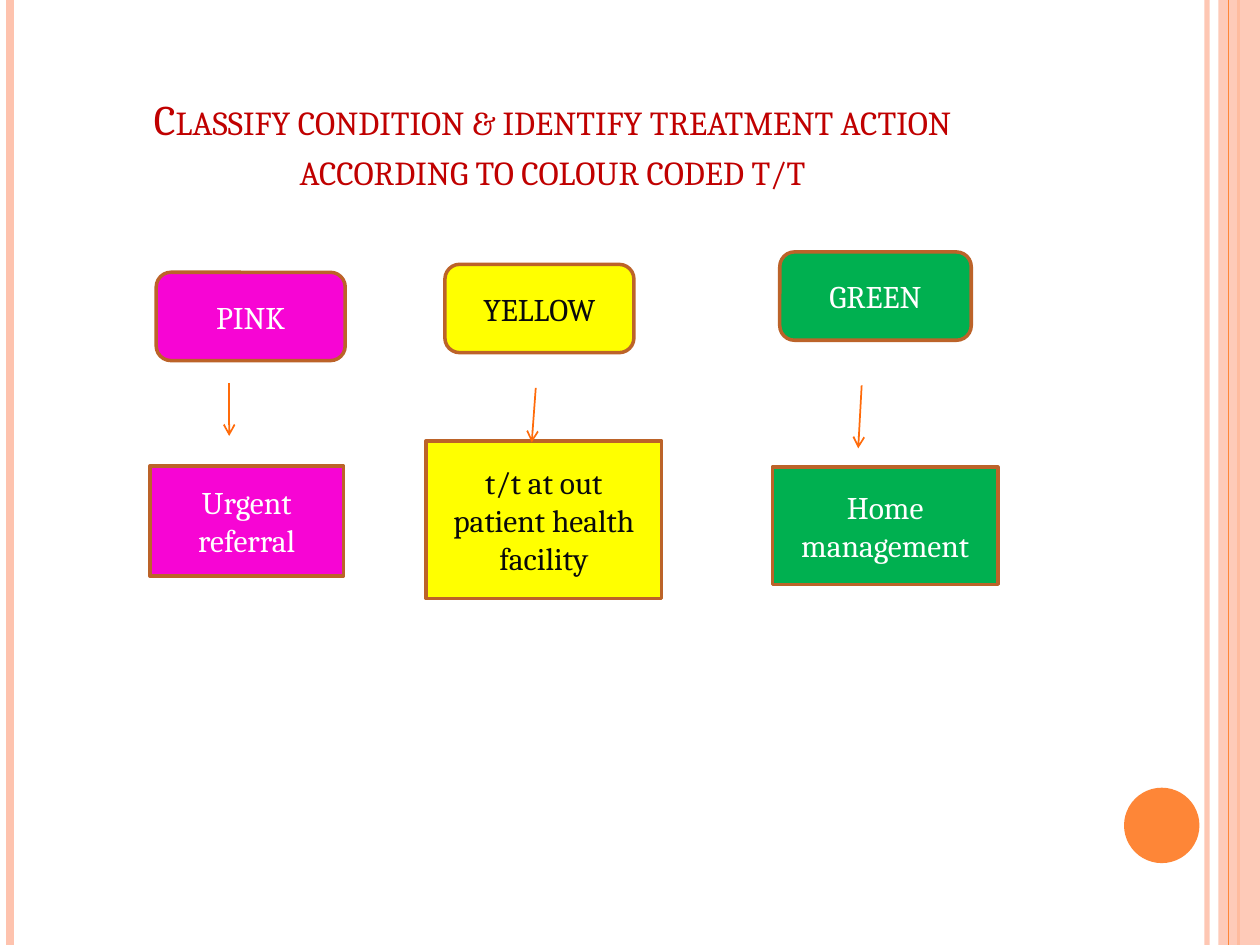
from lxml.etree import SubElement
from pptx import Presentation
from pptx.dml.color import RGBColor
from pptx.enum.shapes import MSO_CONNECTOR, MSO_SHAPE
from pptx.enum.text import MSO_ANCHOR, MSO_AUTO_SIZE, PP_ALIGN
from pptx.oxml.ns import qn
from pptx.util import Cm, Pt

COLOURS = {
    "peach": "FEC3AE", "orange": "FE8637", "arrow": "FF6B0A", "border": "BC6329",
    "title": "C00000", "pink": "F705D4", "yellow": "FFFF00", "green": "00B050",
    "white": "FFFFFF", "ink": "09090B",
}
WIDTH, HEIGHT = 25.4, 19.05
STRIPES = [
    (24.33, "peach", 3, 93), (0.2, "peach", 4.5, 100), (24.97, "orange", 1.5, 100),
]
COLUMNS = [
    {"box": (3.02, 5.49, 3.91, 6.12), "fill": "pink", "ink": "white",
     "code": "PINK", "action": "Urgent referral", "code_box": (0.13, 3.81),
     "arrow": (1.6, 2.23, 1.6, 3.3), "action_height": 2.21},
    {"box": (8.59, 5.33, 4.75, 6.74), "fill": "yellow", "ink": "ink",
     "code": "YELLOW", "action": "t/t at out patient health facility",
     "code_box": (0.38, 3.81), "arrow": (2.21, 2.49, 2.13, 3.59),
     "action_height": 3.18},
    {"box": (15.57, 5.08, 4.55, 6.7), "fill": "green", "ink": "white",
     "code": "GREEN", "action": "Home management", "code_box": (0.15, 3.86),
     "arrow": (1.8, 2.69, 1.73, 3.96), "action_height": 2.36},
]


def colour(name):
    """Return the named colour."""
    return RGBColor.from_string(COLOURS[name])


def set_opacity(element, percent):
    """Make the colour inside a fill or line partly see-through."""
    if percent < 100:
        value = next(element.iter(qn("a:srgbClr")))
        SubElement(value, qn("a:alpha"), val=str(percent * 1000))


def write_text(shape, text, size, ink, anchor):
    """Write one centred paragraph and return its run."""
    frame = shape.text_frame
    frame_format = {
        "word_wrap": True, "auto_size": MSO_AUTO_SIZE.NONE, "vertical_anchor": anchor,
    }
    for name, value in frame_format.items():
        setattr(frame, name, value)
    para = frame.paragraphs[0]
    para.alignment = PP_ALIGN.CENTER
    span = para.add_run()
    span.text = text
    for name, value in {"name": "Cambria", "size": Pt(size)}.items():
        setattr(span.font, name, value)
    span.font.color.rgb = colour(ink)
    return span


def add_line(page, ends, ink, width, opacity=100, arrow=False):
    """Draw a straight line, with an arrowhead at its end if asked."""
    line = page.shapes.add_connector(MSO_CONNECTOR.STRAIGHT, *map(Cm, ends))
    line.line.color.rgb = colour(ink)
    line.line.width = Pt(width)
    properties = line._element.spPr
    set_opacity(properties, opacity)
    if arrow:
        SubElement(properties.find(qn("a:ln")), qn("a:tailEnd"), type="arrow")
    SubElement(properties, qn("a:effectLst"))


def add_block(page, kind, box, fill, border=None, opacity=100):
    """Add a flat filled shape."""
    block = page.shapes.add_shape(kind, *map(Cm, box))
    block.shadow.inherit = False
    block.fill.solid()
    block.fill.fore_color.rgb = colour(fill)
    set_opacity(block._element.spPr, opacity)
    if border:
        block.line.color.rgb = colour(border)
        block.line.width = Pt(2)
    else:
        block.line.fill.background()
    return block


def add_decoration(page, box):
    """Place the edge stripes and the disc."""
    left, top, width, height = box
    for offset, ink, weight, opacity in STRIPES:
        x = left + offset
        add_line(page, (x, top, x, top + height), ink, weight, opacity)
    band = (left + width - 0.84, top, 0.84, height)
    add_block(page, MSO_SHAPE.RECTANGLE, band, "peach", opacity=87)
    x = left + 24.77
    add_line(page, (x, top, x, top + height), "orange", 0.75)
    add_block(page, MSO_SHAPE.OVAL, (left + 22.66, top + 15.88, 1.52, 1.52), "orange")


def add_title(page, box):
    """Place and format the title in small capitals."""
    title = page.shapes.title
    for name, value in zip(("left", "top", "width", "height"), box):
        setattr(title, name, Cm(value))
    text = "Classify condition & identify treatment action according to colour coded t/t"
    span = write_text(title, text, 24, "title", MSO_ANCHOR.BOTTOM)
    span._r.get_or_add_rPr().set("cap", "small")


def add_column(page, box, column):
    """Place a colour code, its arrow and the action at the foot of the box."""
    left, top, width, height = box
    offset, code_width = column["code_box"]
    foot = column["action_height"]
    parts = [
        (MSO_SHAPE.ROUNDED_RECTANGLE, (left + offset, top, code_width, 1.78), "code"),
        (MSO_SHAPE.RECTANGLE, (left, top + height - foot, width, foot), "action"),
    ]
    for kind, place, key in parts:
        block = add_block(page, kind, place, column["fill"], "border")
        write_text(block, column[key], 18, column["ink"], MSO_ANCHOR.MIDDLE)
    x1, y1, x2, y2 = column["arrow"]
    ends = (left + x1, top + y1, left + x2, top + y2)
    add_line(page, ends, "arrow", 1, arrow=True)


def main():
    """Build and save the slide."""
    deck = Presentation()
    deck.slide_width, deck.slide_height = Cm(WIDTH), Cm(HEIGHT)
    page = deck.slides.add_slide(deck.slide_layouts.get_by_name("Title Only"))
    add_decoration(page, (0, 0, WIDTH, HEIGHT))
    add_title(page, (1.35, 1.27, 19.58, 2.77))
    for column in COLUMNS:
        add_column(page, column["box"], column)
    deck.save("out.pptx")


if __name__ == "__main__":
    main()
